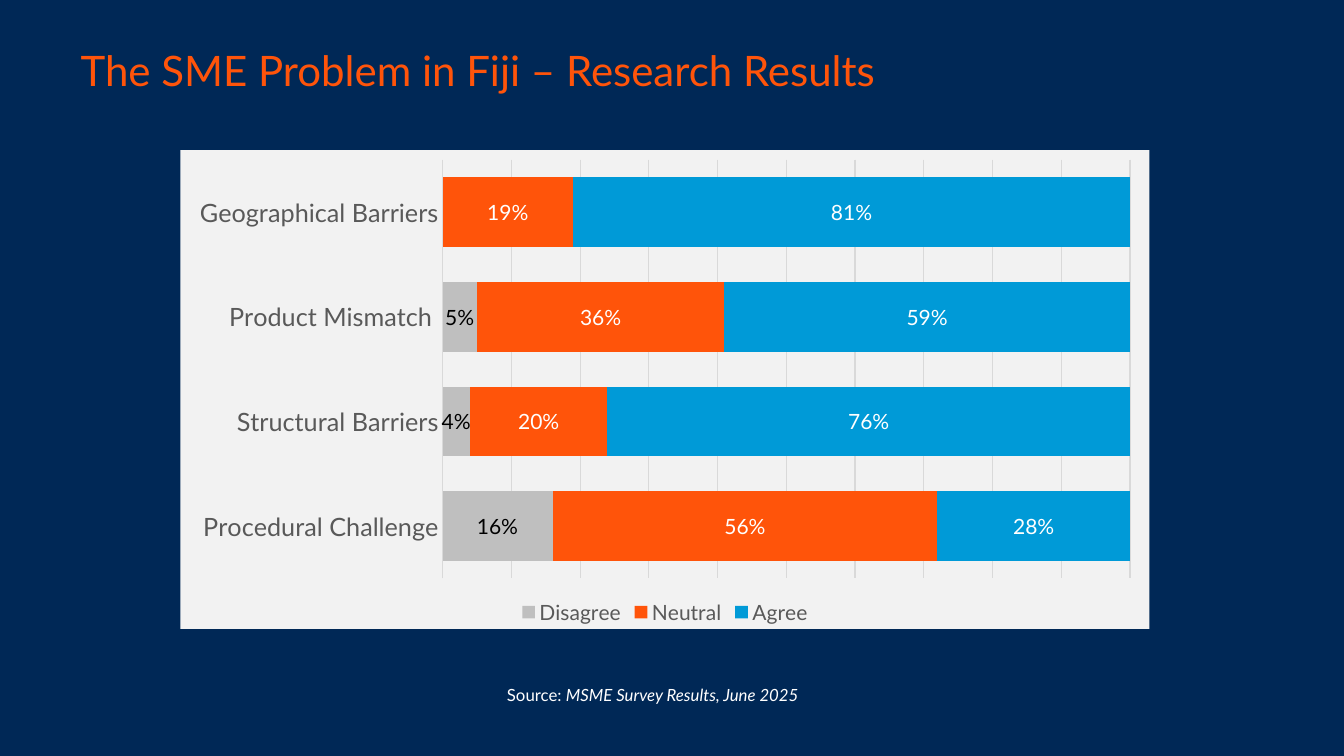
from lxml import etree
from pptx import Presentation
from pptx.chart.data import CategoryChartData
from pptx.dml.color import RGBColor
from pptx.enum.chart import (XL_CHART_TYPE, XL_LABEL_POSITION,
                             XL_LEGEND_POSITION, XL_TICK_MARK)
from pptx.enum.text import MSO_ANCHOR, PP_ALIGN
from pptx.oxml import parse_xml
from pptx.oxml.ns import nsdecls
from pptx.util import Inches, Pt

STACKED = XL_CHART_TYPE.BAR_STACKED_100
CENTER = XL_LABEL_POSITION.CENTER
BOTTOM = XL_LEGEND_POSITION.BOTTOM
NO_TICK = XL_TICK_MARK.NONE
MIDDLE = MSO_ANCHOR.MIDDLE
LEFT, MID = PP_ALIGN.LEFT, PP_ALIGN.CENTER

NAVY = RGBColor(0x00, 0x28, 0x56)
ORANGE = RGBColor(0xFF, 0x54, 0x0A)
BLUE = RGBColor(0x00, 0x9A, 0xD7)
SILVER = RGBColor(0xBF, 0xBF, 0xBF)
PALE = RGBColor(0xF2, 0xF2, 0xF2)
RULE = RGBColor(0xD9, 0xD9, 0xD9)
GRAY = RGBColor(0x59, 0x59, 0x59)
BLACK = RGBColor(0, 0, 0)
WHITE = RGBColor(0xFF, 0xFF, 0xFF)
FACE = "Lato"

TOPICS = ["Procedural Challenge", "Structural Barriers",
          "Product Mismatch ", "Geographical Barriers"]
# Name, shares by topic, bar colour, label colour
ANSWERS = [
    ("Disagree", [0.16, 0.04, 0.05, None], SILVER, BLACK),
    ("Neutral", [0.56, 0.20, 0.36, 0.19], ORANGE, WHITE),
    ("Agree", [0.28, 0.76, 0.59, 0.81], BLUE, WHITE),
]


def style(font, size, color):
    font.name = FACE
    font.size = Pt(size)
    font.color.rgb = color


def rule(line):
    line.color.rgb = RULE
    line.width = Pt(0.75)


def add_title(slide, box):
    title = slide.shapes.title
    title.left, title.top, title.width, title.height = map(Inches, box)
    frame = title.text_frame
    frame.text = "The SME Problem in Fiji – Research Results"
    frame.vertical_anchor = MIDDLE
    para = frame.paragraphs[0]
    para.alignment = LEFT
    style(para.runs[0].font, 30, ORANGE)


def fill_chart(chart, color):
    # The chart area has no public fill property
    area = parse_xml(
        f'<c:spPr {nsdecls("c", "a")}><a:solidFill><a:srgbClr val="{color}"/>'
        '</a:solidFill><a:ln><a:noFill/></a:ln></c:spPr>')
    space = chart.element
    space.find(etree.QName(space.nsmap["c"], "chart").text).addnext(area)


def add_survey(slide, box):
    data = CategoryChartData(number_format="0%")
    data.categories = TOPICS
    for name, shares, _, _ in ANSWERS:
        data.add_series(name, shares)
    chart = slide.shapes.add_chart(STACKED, *map(Inches, box), data).chart
    style(chart.font, 12, BLACK)
    fill_chart(chart, PALE)
    chart.has_title = False

    # Axes and grid
    topics = chart.category_axis
    topics.major_tick_mark = topics.minor_tick_mark = NO_TICK
    topics.has_major_gridlines = False
    style(topics.tick_labels.font, 18, GRAY)
    rule(topics.format.line)
    scale = chart.value_axis
    scale.minimum_scale, scale.maximum_scale = 0, 1
    scale.major_unit = 0.1
    scale.has_major_gridlines = True
    rule(scale.major_gridlines.format.line)
    scale.visible = False

    # Legend
    chart.has_legend = True
    chart.legend.position = BOTTOM
    chart.legend.include_in_layout = False
    style(chart.legend.font, 15, GRAY)

    # Bars and labels
    plot = chart.plots[0]
    plot.gap_width, plot.overlap = 50, 100
    plot.vary_by_categories = False
    for series, (_, _, color, ink) in zip(plot.series, ANSWERS):
        series.format.fill.solid()
        series.format.fill.fore_color.rgb = color
        labels = series.data_labels
        labels.show_value = True
        labels.position = CENTER
        labels.number_format = "0%"
        labels.number_format_is_linked = False
        style(labels.font, 15, ink)


def add_source(slide, box):
    frame = slide.shapes.add_textbox(*map(Inches, box)).text_frame
    frame.word_wrap = True
    para = frame.paragraphs[0]
    para.alignment = MID
    for text, slant in (("Source: ", False),
                        ("MSME Survey Results, June 2025", True)):
        run = para.add_run()
        run.text = text
        style(run.font, 12, WHITE)
        run.font.italic = slant


def main():
    deck = Presentation()
    deck.slide_width, deck.slide_height = Inches(13.33), Inches(7.5)
    slide = deck.slides.add_slide(deck.slide_layouts[5])
    slide.background.fill.solid()
    slide.background.fill.fore_color.rgb = NAVY
    add_survey(slide, (1.79, 1.49, 9.61, 4.75))
    add_source(slide, (1.67, 6.74, 9.61, 0.3))
    add_title(slide, (0.7, 0.39, 11.43, 0.61))
    deck.save("out.pptx")


if __name__ == "__main__":
    main()
